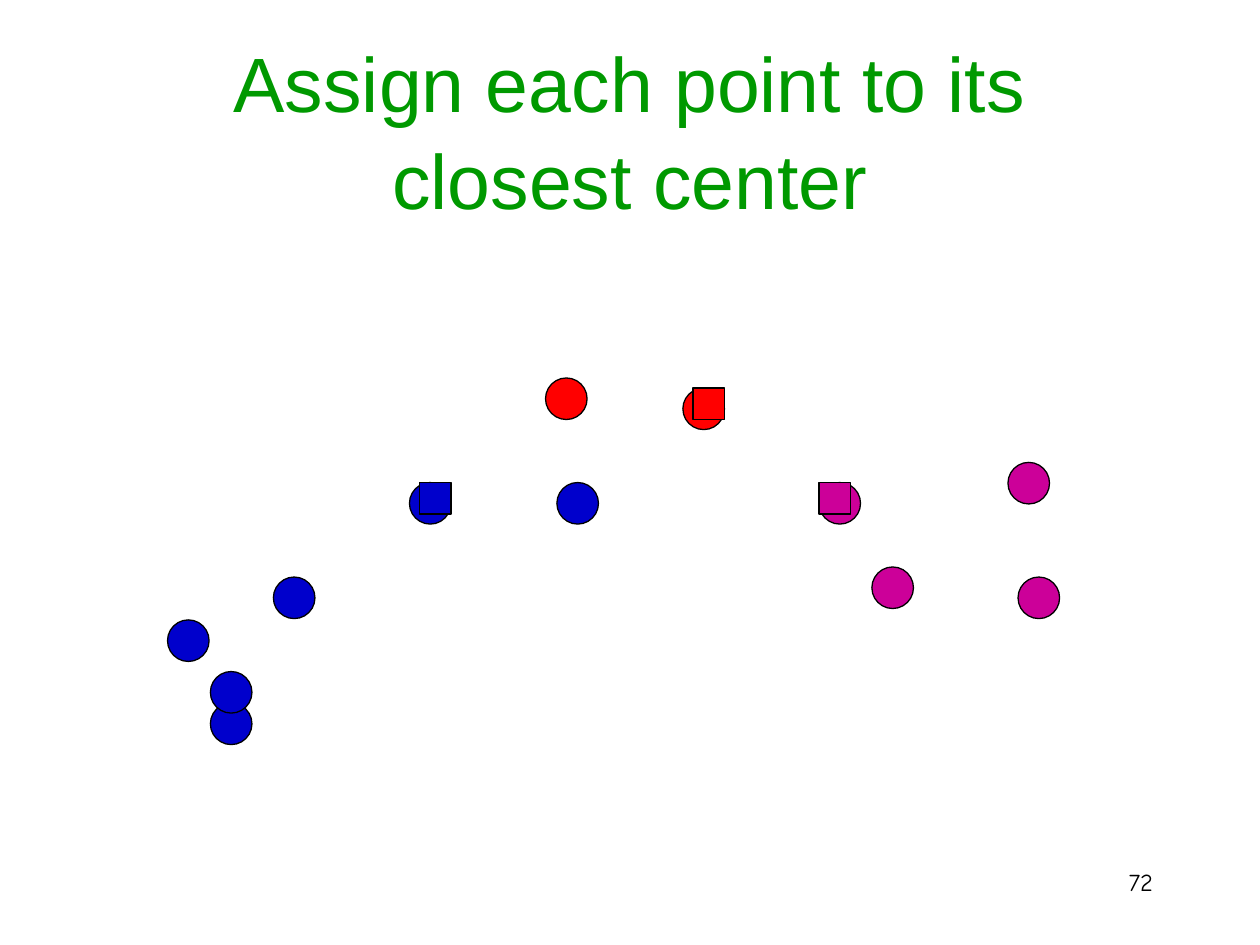
import dataclasses

import pptx
import pptx.dml.color
import pptx.enum.shapes
import pptx.enum.text
import pptx.util

Inches = pptx.util.Inches
Pt = pptx.util.Pt
Align = pptx.enum.text.PP_ALIGN
Anchor = pptx.enum.text.MSO_ANCHOR
Shape = pptx.enum.shapes.MSO_SHAPE


@dataclasses.dataclass(frozen=True)
class Theme:
    background: str = "FFFFFF"
    title: str = "009900"
    ink: str = "000000"
    blue: str = "0000CC"
    red: str = "FF0000"
    purple: str = "CC0099"
    title_font: str = "Arial"
    number_font: str = "Comic Neue"
    title_size: int = 44
    number_size: int = 14
    outline: float = 0.75


def rgb(color):
    return pptx.dml.color.RGBColor.from_string(color)


def write_text(frame, text, *, font, size, color, align, anchor, margin=0.1, spacing=1.0):
    frame.word_wrap = True
    frame.auto_size = pptx.enum.text.MSO_AUTO_SIZE.NONE
    frame.vertical_anchor = anchor
    frame.margin_left = frame.margin_right = Inches(margin)
    paragraph = frame.paragraphs[0]
    paragraph.alignment = align
    paragraph.line_spacing = spacing
    run = paragraph.add_run()
    run.text = text
    run.font.name = font
    run.font.size = Pt(size)
    run.font.color.rgb = rgb(color)


class ClusterSlide:
    POINT_SIZE = 0.33
    CENTER_SIZE = 0.25

    def __init__(self, presentation, theme):
        self.theme = theme
        self.slide = presentation.slides.add_slide(presentation.slide_layouts[5])
        fill = self.slide.background.fill
        fill.solid()
        fill.fore_color.rgb = rgb(theme.background)

    def title(self, text):
        shape = self.slide.shapes.title
        shape.left, shape.top = Inches(0.75), Inches(0.39)
        shape.width, shape.height = Inches(8.5), Inches(1.25)
        write_text(shape.text_frame, text, font=self.theme.title_font,
                   size=self.theme.title_size, color=self.theme.title,
                   align=Align.CENTER, anchor=Anchor.MIDDLE, margin=0.2, spacing=1.05)

    def page_number(self, text):
        shape = self.slide.shapes.add_textbox(
            Inches(7.17), Inches(6.83), Inches(2.08), Inches(0.5))
        write_text(shape.text_frame, text, font=self.theme.number_font,
                   size=self.theme.number_size, color=self.theme.ink,
                   align=Align.RIGHT, anchor=Anchor.TOP)

    def marker(self, kind, left, top, size, color):
        shape = self.slide.shapes.add_shape(
            kind, Inches(left), Inches(top), Inches(size), Inches(size))
        shape.shadow.inherit = False
        shape.fill.solid()
        shape.fill.fore_color.rgb = rgb(color)
        shape.line.color.rgb = rgb(self.theme.ink)
        shape.line.width = Pt(self.theme.outline)

    def point(self, left, top, color):
        self.marker(Shape.OVAL, left, top, self.POINT_SIZE, color)

    def center(self, left, top, color):
        self.marker(Shape.RECTANGLE, left, top, self.CENTER_SIZE, color)


def main():
    theme = Theme()
    points = {
        theme.blue: [(1.67, 5.58), (1.33, 4.92), (2.17, 4.58),
                     (4.42, 3.83), (3.25, 3.83), (1.67, 5.33)],
        theme.red: [(4.33, 3), (5.42, 3.08)],
        theme.purple: [(8, 3.67), (8.08, 4.58), (6.5, 3.83), (6.92, 4.5)],
    }
    centers = {theme.blue: (3.33, 3.83), theme.red: (5.5, 3.08), theme.purple: (6.5, 3.83)}

    presentation = pptx.Presentation()
    presentation.slide_width, presentation.slide_height = Inches(10), Inches(7.5)
    slide = ClusterSlide(presentation, theme)
    slide.title("Assign each point to its closest center")
    slide.page_number("72")
    for color, positions in points.items():
        for left, top in positions:
            slide.point(left, top, color)
    for color, (left, top) in centers.items():
        slide.center(left, top, color)
    presentation.save("out.pptx")


if __name__ == "__main__":
    main()
